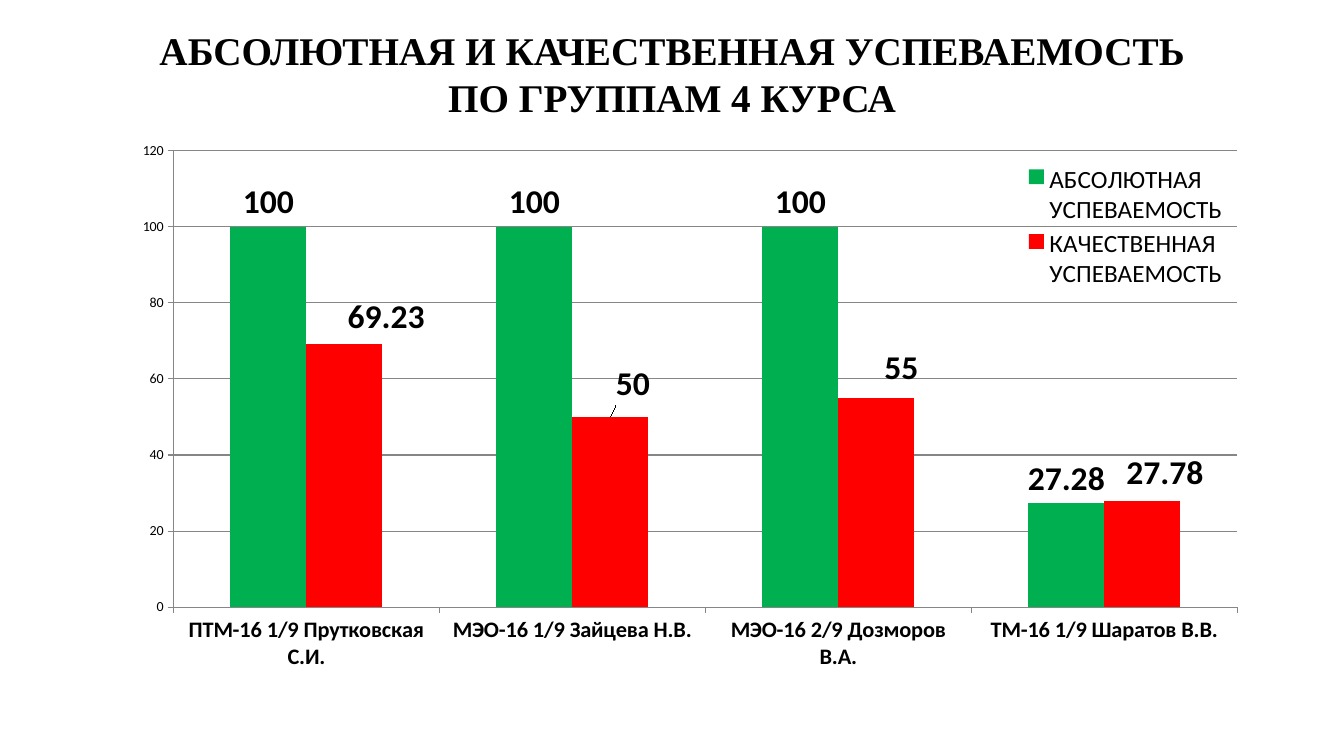
import pptx
import pptx.chart.data
import pptx.dml.color
import pptx.enum.chart
import pptx.enum.text
import pptx.oxml
import pptx.oxml.ns
import pptx.util

PX = 914400 / 100.8
RGB = pptx.dml.color.RGBColor.from_string
ENUM = pptx.enum.chart

THEME = {
    "ink": "000000",
    "grid": "868686",
    "bars": ["00B050", "FF0000"],
    "head": {"name": "Times New Roman", "size": 28, "bold": True},
    "base": {"name": "Calibri", "size": 10, "bold": False},
    "group": {"name": "Calibri", "size": 16, "bold": True},
    "key": {"name": "Calibri", "size": 18, "bold": False},
    "label": {"name": "Calibri", "size": 24, "bold": True},
}

TITLE = ["АБСОЛЮТНАЯ И КАЧЕСТВЕННАЯ УСПЕВАЕМОСТЬ", "ПО ГРУППАМ 4 КУРСА"]
GROUPS = [
    "ПТМ-16 1/9 Прутковская С.И.",
    "МЭО-16 1/9 Зайцева Н.В.",
    "МЭО-16 2/9 Дозморов В.А.",
    "ТМ-16 1/9 Шаратов В.В.",
]
RATES = {
    "АБСОЛЮТНАЯ УСПЕВАЕМОСТЬ": [100, 100, 100, 27.28],
    "КАЧЕСТВЕННАЯ УСПЕВАЕМОСТЬ": [69.23, 50, 55, 27.78],
}
SHIFTS = [(42, -2), (23, -8), (25, -5), (23, -4)]


def emu(px):
    """Turn a length in px into EMU."""
    return pptx.util.Emu(round(px * PX))


def apply(item, values):
    """Set each named value on an item."""
    for name, value in values.items():
        setattr(item, name, value)


def style(font, kind):
    """Give a font one of the theme's text styles."""
    values = THEME[kind]
    apply(font, {**values, "size": pptx.util.Pt(values["size"])})
    font.color.rgb = RGB(THEME["ink"])


def layout(node, index, parts):
    """Put a manual layout at the given place among a chart node's children."""
    for old in node.findall(pptx.oxml.ns.qn("c:layout")):
        node.remove(old)
    body = "".join(f'<c:{name} val="{value}"/>' for name, value in parts.items())
    node.insert(index, pptx.oxml.parse_xml(
        f'<c:layout {pptx.oxml.ns.nsdecls("c")}>'
        f"<c:manualLayout>{body}</c:manualLayout></c:layout>"))


def share(box, size):
    """Express a px box inside a chart as edge-based layout parts."""
    x, y, w, h = box
    return {"xMode": "edge", "yMode": "edge",
            "x": round(x / size[0], 3), "y": round(y / size[1], 3),
            "w": round(w / size[0], 3), "h": round(h / size[1], 3)}


def head(slide, box):
    """Place the two-line title in its box."""
    title = slide.shapes.title
    apply(title, dict(zip(("left", "top", "width", "height"), map(emu, box))))
    frame = title.text_frame
    frame.text = "\n".join(TITLE)
    apply(frame, {"word_wrap": False,
                  "auto_size": pptx.enum.text.MSO_AUTO_SIZE.SHAPE_TO_FIT_TEXT,
                  "vertical_anchor": pptx.enum.text.MSO_ANCHOR.MIDDLE})
    for para in frame.paragraphs:
        para.alignment = pptx.enum.text.PP_ALIGN.CENTER
        style(para.runs[0].font, "head")


def axes(chart):
    """Format both axes and the grid."""
    groups, scale = chart.category_axis, chart.value_axis
    apply(scale, {"minimum_scale": 0, "maximum_scale": 120, "major_unit": 20,
                  "has_major_gridlines": True})
    for axis, kind in ((groups, "group"), (scale, "base")):
        axis.major_tick_mark = ENUM.XL_TICK_MARK.OUTSIDE
        style(axis.tick_labels.font, kind)
    for line in (groups.format.line, scale.format.line,
                 scale.major_gridlines.format.line):
        line.color.rgb = RGB(THEME["grid"])
        line.width = pptx.util.Pt(0.75)


def bars(chart, size):
    """Colour the bars and place their value labels."""
    plot = chart.plots[0]
    apply(plot, {"gap_width": 150, "overlap": 0, "vary_by_categories": False})
    above = ENUM.XL_LABEL_POSITION.OUTSIDE_END
    for series, color in zip(plot.series, THEME["bars"]):
        series.format.fill.solid()
        series.format.fill.fore_color.rgb = RGB(color)
        apply(series.data_labels, {"show_value": True, "position": above})
        style(series.data_labels.font, "label")
    for index in range(len(SHIFTS)):
        label = plot.series[1].points[index].data_label
        label.position = above
        style(label.font, "label")
    for node, (x, y) in zip(chart.element.xpath(".//c:dLbl"), SHIFTS):
        layout(node, 1, {"x": round(x / size[0], 3), "y": round(y / size[1], 3)})


def graph(slide, box):
    """Place the column chart in its box."""
    data = pptx.chart.data.CategoryChartData()
    data.categories = GROUPS
    for name, values in RATES.items():
        data.add_series(name, values)
    chart = slide.shapes.add_chart(
        ENUM.XL_CHART_TYPE.COLUMN_CLUSTERED, *map(emu, box), data).chart
    size = box[2:]
    apply(chart, {"has_title": False, "has_legend": True})
    style(chart.font, "base")
    axes(chart)
    bars(chart, size)
    apply(chart.legend, {"position": ENUM.XL_LEGEND_POSITION.RIGHT,
                         "include_in_layout": False})
    style(chart.legend.font, "key")
    area = chart.element.xpath(".//c:plotArea")[0]
    layout(area, 0, {"layoutTarget": "inner", **share((85, 24, 1064, 463), size)})
    layout(chart.element.xpath(".//c:legend")[0], 1,
           share((932, 33, 210, 136), size))


def main():
    """Build and save the slide."""
    deck = pptx.Presentation()
    apply(deck, {"slide_width": emu(1344), "slide_height": emu(756)})
    slide = deck.slides.add_slide(deck.slide_layouts.get_by_name("Title Only"))
    head(slide, (144, 21, 1056, 105))
    graph(slide, (89, 127, 1190, 544))
    deck.save("out.pptx")


if __name__ == "__main__":
    main()
